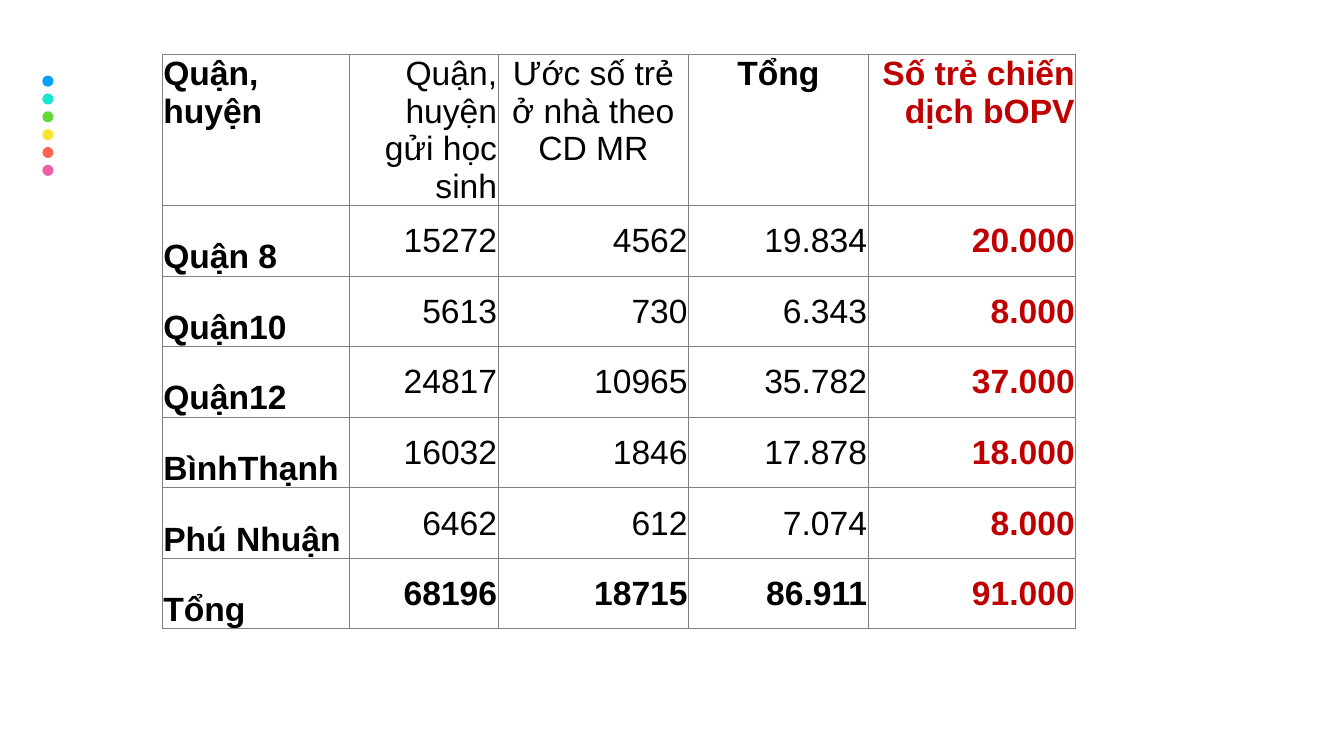
from lxml import etree
from pptx import Presentation
from pptx.dml.color import RGBColor
from pptx.enum.shapes import MSO_SHAPE
from pptx.enum.text import MSO_ANCHOR, PP_ALIGN
from pptx.oxml.ns import qn
from pptx.util import Inches, Pt

OVAL = MSO_SHAPE.OVAL
LEFT, CENTER, RIGHT = PP_ALIGN.LEFT, PP_ALIGN.CENTER, PP_ALIGN.RIGHT
TOP, MIDDLE, BOTTOM = MSO_ANCHOR.TOP, MSO_ANCHOR.MIDDLE, MSO_ANCHOR.BOTTOM


def color(hex_code):
    return RGBColor.from_string(hex_code)


def add_borders(cell, hex_code, width):
    properties = cell._tc.get_or_add_tcPr()
    for side in ("a:lnL", "a:lnR", "a:lnT", "a:lnB"):
        line = etree.SubElement(properties, qn(side), w=str(width))
        fill = etree.SubElement(line, qn("a:solidFill"))
        etree.SubElement(fill, qn("a:srgbClr"), val=hex_code)


prs = Presentation()
prs.slide_width, prs.slide_height = Inches(13.33), Inches(7.5)
slide = prs.slides.add_slide(prs.slide_layouts[6])

# Column of coloured dots
dot_colors = ["00A2FF", "16E7CF", "61D836", "FAE232", "FF644E", "EF5FA7"]
for i, dot_color in enumerate(dot_colors):
    dot = slide.shapes.add_shape(
        OVAL, Inches(0.42), Inches(0.75 + i * 0.177), Inches(0.11), Inches(0.11))
    dot.shadow.inherit = False
    dot.fill.solid()
    dot.fill.fore_color.rgb = color(dot_color)
    dot.line.fill.background()

# District table
district_rows = [
    ["Quận, huyện", "Quận, huyện gửi học sinh", "Ước số trẻ ở nhà theo CD MR",
     "Tổng", "Số trẻ chiến dịch bOPV"],
    ["Quận 8", "15272", "4562", "19.834", "20.000"],
    ["Quận10", "5613", "730", "6.343", "8.000"],
    ["Quận12", "24817", "10965", "35.782", "37.000"],
    ["BìnhThạnh", "16032", "1846", "17.878", "18.000"],
    ["Phú Nhuận", "6462", "612", "7.074", "8.000"],
    ["Tổng", "68196", "18715", "86.911", "91.000"],
]
column_widths = [1.85, 1.48, 1.89, 1.78, 2.06]
row_heights = [1.3] + [0.7] * 6
header_alignments = [LEFT, RIGHT, CENTER, CENTER, RIGHT]
header_bold_columns = (0, 3, 4)
body_bold_columns = (0, 4)
total_row = len(district_rows) - 1
campaign_column = len(column_widths) - 1

districts = slide.shapes.add_table(
    len(district_rows), len(column_widths), Inches(1.61), Inches(0.54),
    Inches(sum(column_widths)), Inches(sum(row_heights))).table
for column, width in zip(districts.columns, column_widths):
    column.width = Inches(width)
for row, height in zip(districts.rows, row_heights):
    row.height = Inches(height)

for r, values in enumerate(district_rows):
    for c, value in enumerate(values):
        cell = districts.cell(r, c)
        add_borders(cell, "808080", Pt(0.5))
        cell.fill.background()
        cell.margin_left = cell.margin_right = cell.margin_top = Inches(0.01)
        cell.margin_bottom = 0

        # Header, district names and figures are placed differently
        if r == 0:
            cell.vertical_anchor = TOP
            alignment = header_alignments[c]
            bold = c in header_bold_columns
        else:
            cell.vertical_anchor = BOTTOM if c == 0 else MIDDLE
            alignment = LEFT if c == 0 else RIGHT
            bold = c in body_bold_columns or r == total_row

        cell.text_frame.text = value
        paragraph = cell.text_frame.paragraphs[0]
        paragraph.alignment = alignment
        font = paragraph.runs[0].font
        font.name = "Arial"
        font.size = Pt(24)
        font.bold = bold
        font.color.rgb = color("C00000" if c == campaign_column else "000000")

prs.save("out.pptx")
